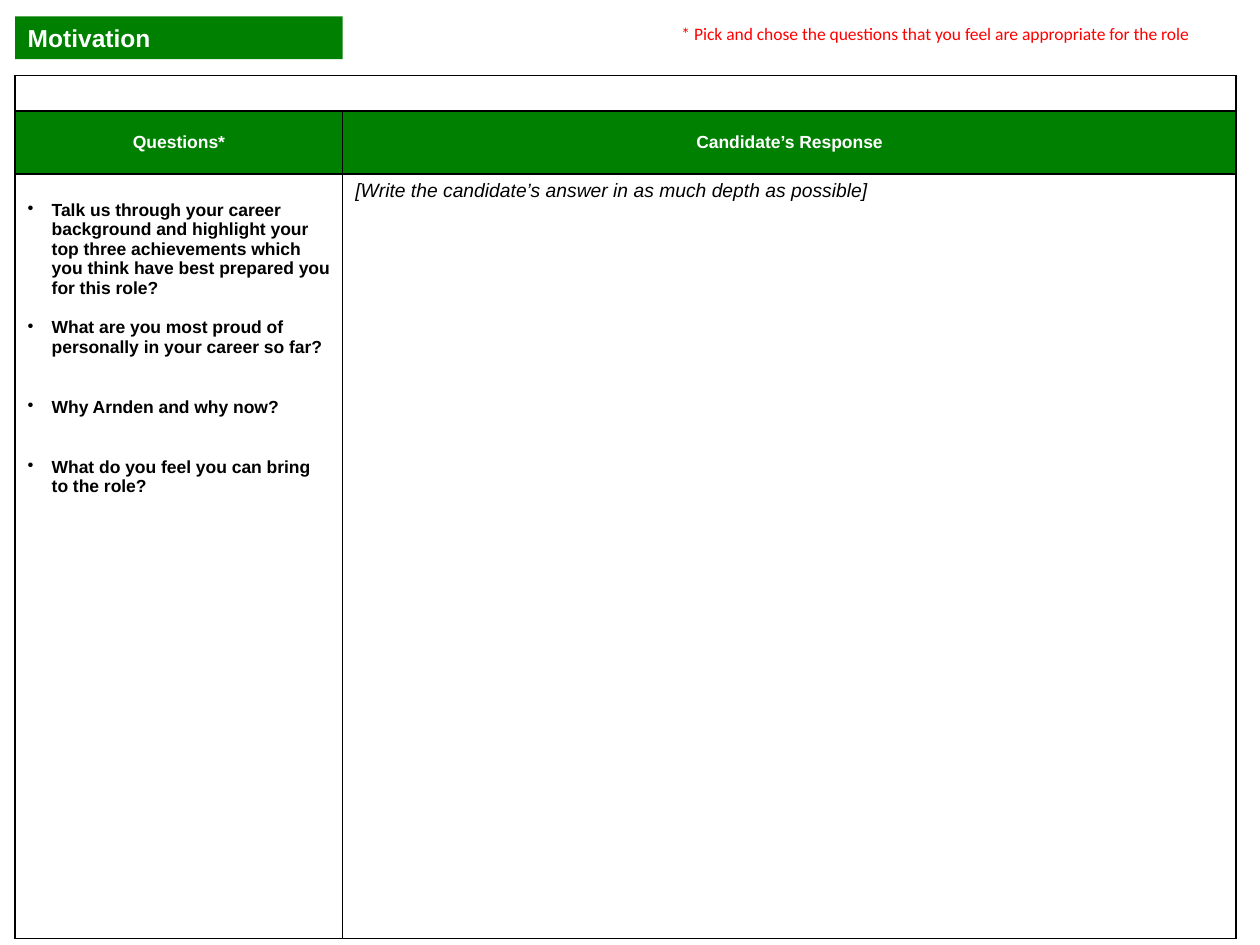
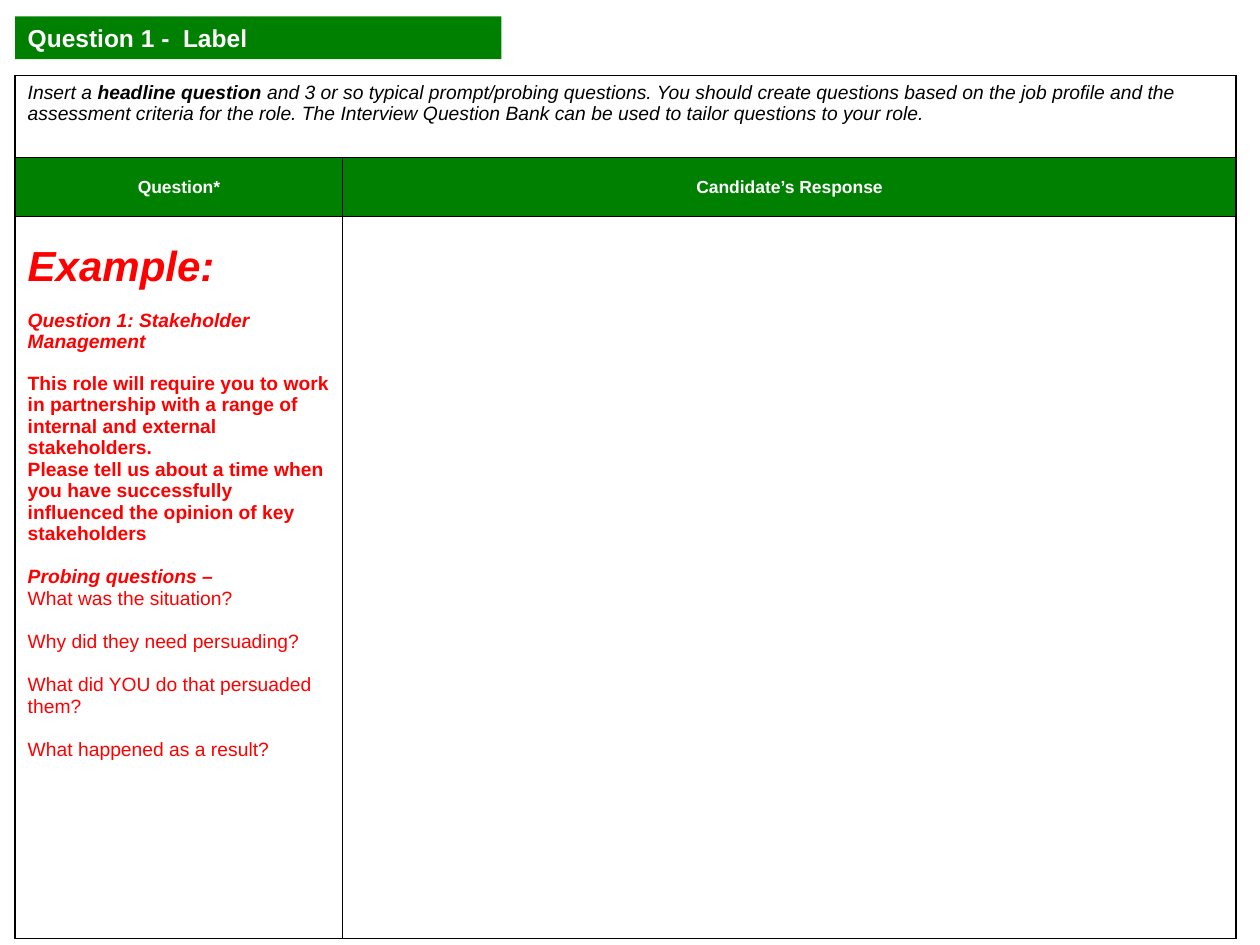
import lxml.etree
import pptx
import pptx.dml.color
import pptx.enum.text
import pptx.oxml.ns
import pptx.util

GREEN, RED, BLACK, WHITE = "008000", "FF0000", "000000", "FFFFFF"
LEFT, BAND_TOP, BAND_HEIGHT = 0.12, 0.13, 0.34
TABLE_TOP, QUESTION_WIDTH, RESPONSE_WIDTH = 0.6, 2.6, 7.09
BLANK_LINE = 11.5  # points, one line of 10 point text
CENTER = pptx.enum.text.PP_ALIGN.CENTER
MIDDLE = pptx.enum.text.MSO_ANCHOR.MIDDLE
inches = pptx.util.Inches


def color(value):
    return pptx.dml.color.RGBColor.from_string(value)


def write(frame, text, size=10, fill=BLACK, bold=False, italic=False, font="Arial",
          align=pptx.enum.text.PP_ALIGN.LEFT, before=0, bullet=False, same_line=False):
    """Add text as a new paragraph, or as a further span of the last one."""
    para = frame.paragraphs[-1]
    if para.runs and not same_line:
        para = frame.add_paragraph()
    if not same_line:
        para.alignment = align
        para.space_before = pptx.util.Pt(before)
    if bullet:
        properties = para._p.get_or_add_pPr()
        properties.set("marL", str(inches(0.19)))
        properties.set("indent", str(-inches(0.19)))
        mark = lxml.etree.SubElement(properties, pptx.oxml.ns.qn("a:buChar"))
        mark.set("char", "•")
    span = para.add_run()
    span.text = text
    span.font.name = font
    span.font.size = pptx.util.Pt(size)
    span.font.bold, span.font.italic = bold, italic
    span.font.color.rgb = color(fill)


deck = pptx.Presentation()
deck.slide_width, deck.slide_height = inches(10), inches(7.5)

# Title, band width, question heading, row heights
forms = [
    ("Motivation", QUESTION_WIDTH, "Questions*", (0.28, 0.5, 6.07)),
    ("Question 1 -  Label", 3.86, "Question*", (0.65, 0.47, 5.73)),
]
pages, tables = [], []
for title, band_width, heading, row_heights in forms:
    page = deck.slides.add_slide(deck.slide_layouts[5])
    band = page.shapes.title
    band.left, band.top = inches(LEFT), inches(BAND_TOP)
    band.width, band.height = inches(band_width), inches(BAND_HEIGHT)
    band.fill.solid()
    band.fill.fore_color.rgb = color(GREEN)
    band.text_frame.auto_size = pptx.enum.text.MSO_AUTO_SIZE.NONE
    band.text_frame.vertical_anchor = MIDDLE
    write(band.text_frame, title, size=14, fill=WHITE, bold=True)

    table = page.shapes.add_table(
        3, 2, inches(LEFT), inches(TABLE_TOP),
        inches(QUESTION_WIDTH + RESPONSE_WIDTH), inches(sum(row_heights))).table
    table.first_row = table.horz_banding = False
    for column, width in zip(table.columns, (QUESTION_WIDTH, RESPONSE_WIDTH)):
        column.width = inches(width)
    for row, height in zip(table.rows, row_heights):
        row.height = inches(height)
    for cell in table.iter_cells():
        for side in ("lnL", "lnR", "lnT", "lnB"):
            border = lxml.etree.SubElement(
                cell._tc.get_or_add_tcPr(), pptx.oxml.ns.qn("a:" + side), w="12700")
            solid = lxml.etree.SubElement(border, pptx.oxml.ns.qn("a:solidFill"))
            lxml.etree.SubElement(solid, pptx.oxml.ns.qn("a:srgbClr"), val=BLACK)
        cell.fill.background()
        ending = cell.text_frame.paragraphs[0]._p.get_or_add_endParaRPr()
        ending.set("sz", "1000")
    table.cell(0, 0).merge(table.cell(0, 1))
    for index, text in enumerate((heading, "Candidate’s Response")):
        cell = table.cell(1, index)
        cell.fill.solid()
        cell.fill.fore_color.rgb = color(GREEN)
        cell.vertical_anchor = MIDDLE
        write(cell.text_frame, text, fill=WHITE, bold=True, align=CENTER)
    table.cell(2, 0).margin_top = inches(0.21)
    pages.append(page)
    tables.append(table)

# Motivation
questions = tables[0].cell(2, 0).text_frame
for text, blank_lines in [
    ("Talk us through your career background and highlight your top three achievements "
     "which you think have best prepared you for this role?", 0),
    ("What are you most proud of personally in your career so far?", 1),
    ("Why Arnden and why now?", 2),
    ("What do you feel you can bring to the role?", 2),
]:
    write(questions, text, bold=True, bullet=True, before=blank_lines * BLANK_LINE)
write(tables[0].cell(2, 1).text_frame,
      "[Write the candidate’s answer in as much depth as possible]", size=11, italic=True)

note = pages[0].shapes.add_textbox(inches(5.31), inches(BAND_TOP), inches(4.49), inches(0.27))
note.text_frame.word_wrap = True
write(note.text_frame,
      "* Pick and chose the questions that you feel are appropriate for the role",
      fill=RED, font="Calibri")

# Question 1
guidance = tables[1].cell(0, 0).text_frame
for text, bold in [
    ("Insert a ", False),
    ("headline question", True),
    (" and 3 or so typical prompt/probing questions. You should create questions based on "
     "the job profile and the assessment criteria for the role. The Interview Question Bank "
     "can be used to tailor questions to your role.", False),
]:
    write(guidance, text, size=11, bold=bold, italic=True, same_line=True)

example = tables[1].cell(2, 0).text_frame
write(example, "Example:", size=24, fill=RED, bold=True, italic=True)
for text, bold, italic, before in [
    ("Question 1: Stakeholder Management", True, True, BLANK_LINE),
    ("This role will require you to work in partnership with a range of internal and "
     "external stakeholders.", True, False, BLANK_LINE),
    ("Please tell us about a time when you have successfully influenced the opinion of key "
     "stakeholders", True, False, 0),
    ("Probing questions –", True, True, 12.5),
    ("What was the situation?", False, False, 0),
    ("Why did they need persuading?", False, False, 12.5),
    ("What did YOU do that persuaded them?", False, False, 12.5),
    ("What happened as a result?", False, False, 12.5),
]:
    write(example, text, size=11, fill=RED, bold=bold, italic=italic, before=before)

deck.save("out.pptx")
